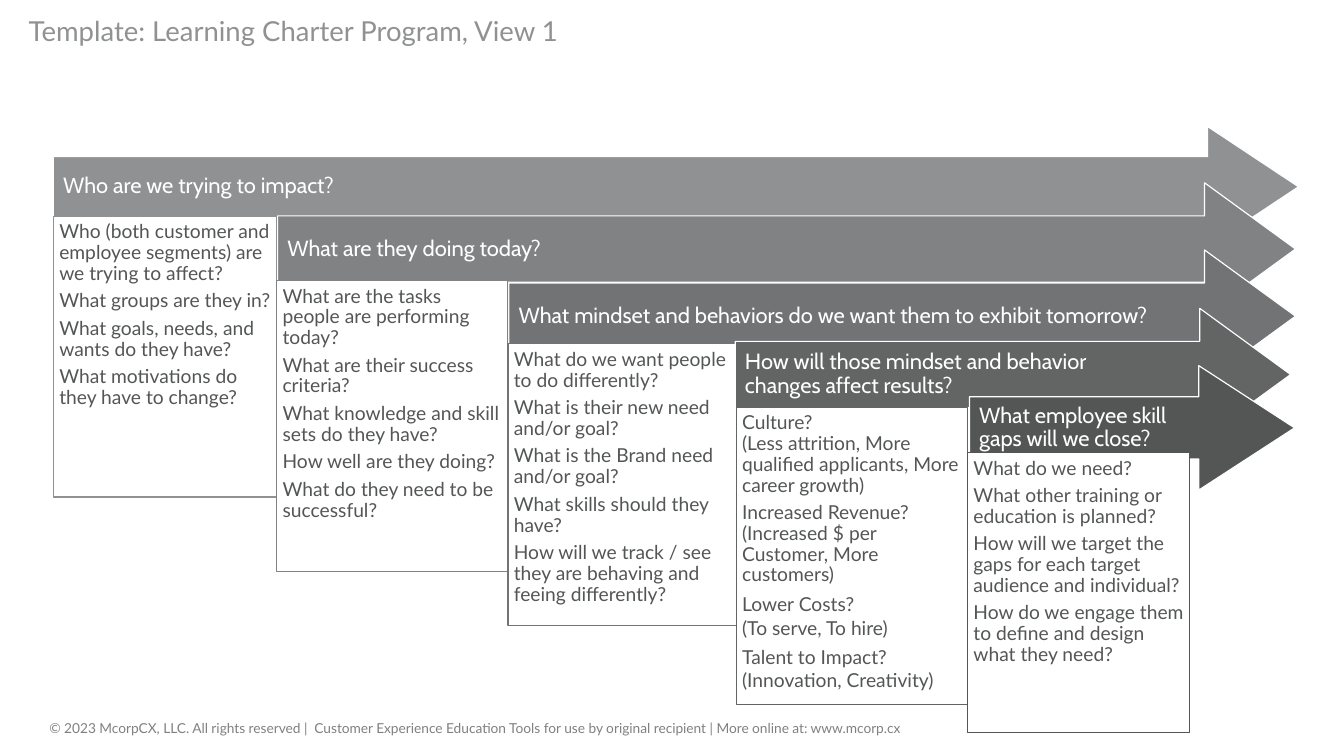
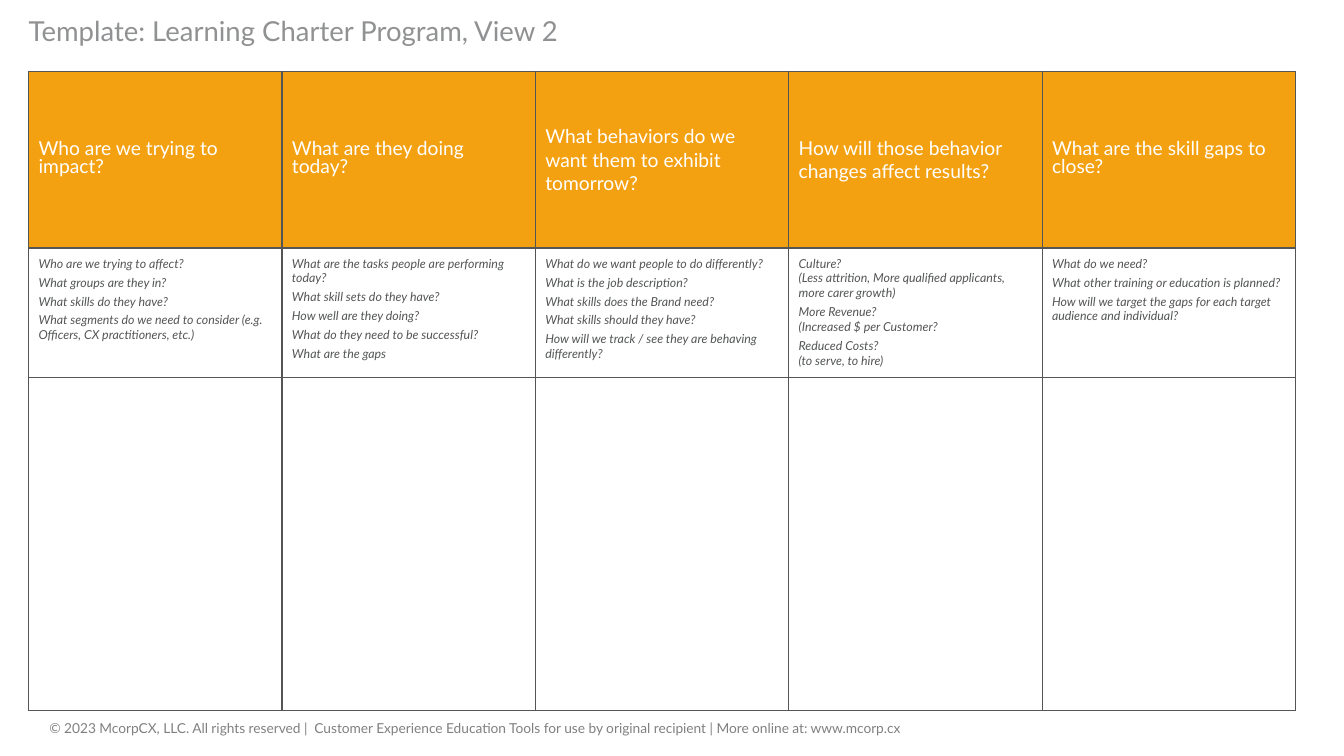
from collections import namedtuple
from dataclasses import dataclass

from lxml.etree import SubElement
from pptx import Presentation
from pptx.dml.color import RGBColor
from pptx.enum.shapes import MSO_SHAPE as Shape
from pptx.enum.text import MSO_ANCHOR as Anchor, PP_ALIGN as Align
from pptx.oxml.ns import qn
from pptx.util import Inches, Pt

Style = namedtuple("Style", "size font color lead after italic", defaults=(None, 0, False))
Step = namedtuple("Step", "head arrow tip box asks tight", defaults=(99,))


@dataclass(frozen=True)
class Theme:
    white: str = "FFFFFF"
    ink: str = "545555"
    gold: str = "F4A111"
    greys: tuple = ("909192", "818283", "727374", "636464", "545555")
    line: float = 0.85
    title: Style = Style(20, "Lato", "909192", 0.75)
    foot: Style = Style(10, "Lato", "808080")
    arrow: Style = Style(16, "Cabin", "FFFFFF", 0.9, 6)
    body: Style = Style(14, "Lato", "545555", 0.9, 4.9)
    head: Style = Style(14, "Lato", "FFFFFF")
    note: Style = Style(9, "Lato", "545555", None, 3, True)


T = Theme()
WIDE, HIGH = 13.6, 7.65
EDGE = 0.29
TITLE = "Template: Learning Charter Program, View "
FOOT = ("© 2023 McorpCX, LLC. All rights reserved |  Customer Experience Education Tools "
        "for use by original recipient | More online at: www.mcorp.cx")

# A tuple of lines belongs together: space follows only its last line.
# Arrow and box are left, top, width, height; tip is the length of the arrow head.
STEPS = [
    Step("Who are we trying to impact?",
         (0.54, 1.28, 12.6, 1.22), 0.92, (0.54, 2.19, 2.26, 2.84),
         ["Who (both customer and employee segments) are we trying to affect?",
          "What groups are they in?",
          "What goals, needs, and wants do they have?",
          "What motivations do they have to change?"]),
    Step("What are they doing today?",
         (2.81, 1.85, 10.3, 1.34), 0.92, (2.8, 2.84, 2.34, 2.94),
         ["What are the tasks people are performing today?",
          "What are their success criteria?",
          "What knowledge and skill sets do they have?",
          "How well are they doing?",
          "What do they need to be successful?"]),
    Step("What mindset and behaviors do we want them to exhibit tomorrow?",
         (5.15, 2.53, 7.96, 1.34), 0.92, (5.14, 3.48, 2.34, 2.85),
         ["What do we want people to do differently?",
          "What is their new need and/or goal?",
          "What is the Brand need and/or goal?",
          "What skills should they have?",
          "How will we track / see they are behaving and feeing differently?"]),
    Step("How will those mindset and behavior\nchanges affect results?",
         (7.44, 3.12, 5.62, 1.34), 0.92, (7.45, 4.12, 2.34, 3.01),
         [("Culture?", "(Less attrition, More qualified applicants, More career growth)"),
          ("Increased Revenue?", "(Increased $ per Customer, More customers)"),
          ("Lower Costs?", "(To serve, To hire)"),
          ("Talent to Impact?", "(Innovation, Creativity)")], 2),
    Step("What employee skill\ngaps will we close?",
         (9.81, 3.7, 3.29, 1.26), 0.97, (9.79, 4.58, 2.25, 2.83),
         ["What do we need?",
          "What other training or education is planned?",
          "How will we target the gaps for each target audience and individual?",
          "How do we engage them to define and design what they need?"]),
]

# Heading, its line pitch, questions
COLS = [
    ("Who are we trying to impact?", Pt(13),
     ["Who are we trying to affect?", "What groups are they in?",
      "What skills do they have?",
      "What segments do we need to consider (e.g. Officers, CX practitioners, etc.)"]),
    ("What are they doing today?", Pt(13),
     ["What are the tasks people are performing today?",
      "What skill sets do they have?", "How well are they doing?",
      "What do they need to be successful?", "What are the gaps"]),
    ("What behaviors do we want them to exhibit tomorrow?", None,
     ["What do we want people to do differently?", "What is the job description?",
      "What skills does the Brand need?", "What skills should they have?",
      "How will we track / see they are behaving differently?"]),
    ("How will those behavior changes affect results?", None,
     [("Culture?", "(Less attrition, More qualified applicants, more carer growth)"),
      ("More Revenue?", "(Increased $ per Customer?"),
      ("Reduced Costs?", "(to serve, to hire)")]),
    ("What are the skill gaps to close?", Pt(13),
     ["What do we need?", "What other training or education is planned?",
      "How will we target the gaps for each target audience and individual?"]),
]
ROWS = (1.79, 1.31, 3.37)
COL = 2.564


def rgb(code):
    return RGBColor.from_string(code)


def area(*sides):
    return [Inches(s) for s in sides]


def write(frame, groups, style, tight=99):
    """Add groups of lines; those from number tight on get single spacing."""
    para = None
    for num, group in enumerate(groups):
        lines = (group,) if isinstance(group, str) else group
        for line in lines:
            para = frame.add_paragraph() if para else frame.paragraphs[0]
            para.alignment = Align.LEFT
            if style.lead and num < tight:
                para.line_spacing = style.lead
            para.space_before = Pt(0)
            para.space_after = Pt(style.after if line == lines[-1] else 0)
            for idx, part in enumerate(line.split("\n")):
                if idx:
                    para.add_line_break()
                run = para.add_run()
                run.text = part
                font = run.font
                font.size, font.name = Pt(style.size), style.font
                font.italic = style.italic
                font.color.rgb = rgb(style.color)


def inset(item, left, top, right, low):
    item.margin_left, item.margin_top, item.margin_right, item.margin_bottom = area(
        left, top, right, low)


def setup(frame, anchor, *pads):
    frame.word_wrap = True
    frame.vertical_anchor = anchor
    inset(frame, *pads)


def block(slide, kind, place, fill, line=None):
    shape = slide.shapes.add_shape(kind, *area(*place))
    shape.shadow.inherit = False
    shape.fill.solid()
    shape.fill.fore_color.rgb = rgb(fill)
    if line:
        shape.line.color.rgb = rgb(line)
        shape.line.width = Pt(T.line)
    else:
        shape.line.fill.background()
    return shape


def start(deck, view):
    """Add a slide with its title and footer."""
    slide = deck.slides.add_slide(deck.slide_layouts[5])
    title = slide.shapes.title
    title.left, title.top, title.width, title.height = area(EDGE, 0.22, 12.6, 0.25)
    setup(title.text_frame, Anchor.TOP, 0, 0, 0, 0)
    write(title.text_frame, [f"{TITLE}{view}"], T.title)
    foot = block(slide, Shape.RECTANGLE, (0.5, 7.28, 11.33, 0.17), T.white)
    setup(foot.text_frame, Anchor.MIDDLE, 0, 0, 0, 0)
    write(foot.text_frame, [FOOT], T.foot)
    return slide


def stairs(slide):
    for step, grey in zip(STEPS, T.greys):
        arrow = block(slide, Shape.RIGHT_ARROW, step.arrow, grey, T.white)
        arrow.adjustments[0] = 0.5
        arrow.adjustments[1] = step.tip / step.arrow[3]
        setup(arrow.text_frame, Anchor.MIDDLE, 0.1, 0, 0.19, 0)
        write(arrow.text_frame, [step.head], T.arrow)
        box = block(slide, Shape.RECTANGLE, step.box, T.white, grey)
        setup(box.text_frame, Anchor.TOP, 0.06, 0.06, 0.06, 0.06)
        write(box.text_frame, step.asks, T.body, step.tight)


def paint(cell, fill):
    """Draw the four borders, then fill the cell."""
    props = cell._tc.get_or_add_tcPr()
    for side in ("lnL", "lnR", "lnT", "lnB"):
        edge = SubElement(props, qn(f"a:{side}"), w=str(Pt(1)))
        solid = SubElement(edge, qn("a:solidFill"))
        SubElement(solid, qn("a:srgbClr"), val=T.ink)
    cell.fill.solid()
    cell.fill.fore_color.rgb = rgb(fill)
    inset(cell, 0.1, 0.08, 0.1, 0.08)


def grid(slide):
    count = len(COLS)
    table = slide.shapes.add_table(
        len(ROWS), count, *area(EDGE, 0.72, COL * count, sum(ROWS))).table
    for row, high in zip(table.rows, ROWS):
        row.height = Inches(high)
    for num, (head, lead, asks) in enumerate(COLS):
        table.columns[num].width = Inches(COL)
        top, mid, low = (table.cell(row, num) for row in range(len(ROWS)))
        for cell, fill in ((top, T.gold), (mid, T.white), (low, T.white)):
            paint(cell, fill)
        top.vertical_anchor = Anchor.MIDDLE
        write(top.text_frame, [head], T.head._replace(lead=lead))
        write(mid.text_frame, asks, T.note)


def main():
    deck = Presentation()
    deck.slide_width, deck.slide_height = area(WIDE, HIGH)
    for view, draw in enumerate((stairs, grid), 1):
        draw(start(deck, view))
    deck.save("out.pptx")


if __name__ == "__main__":
    main()
